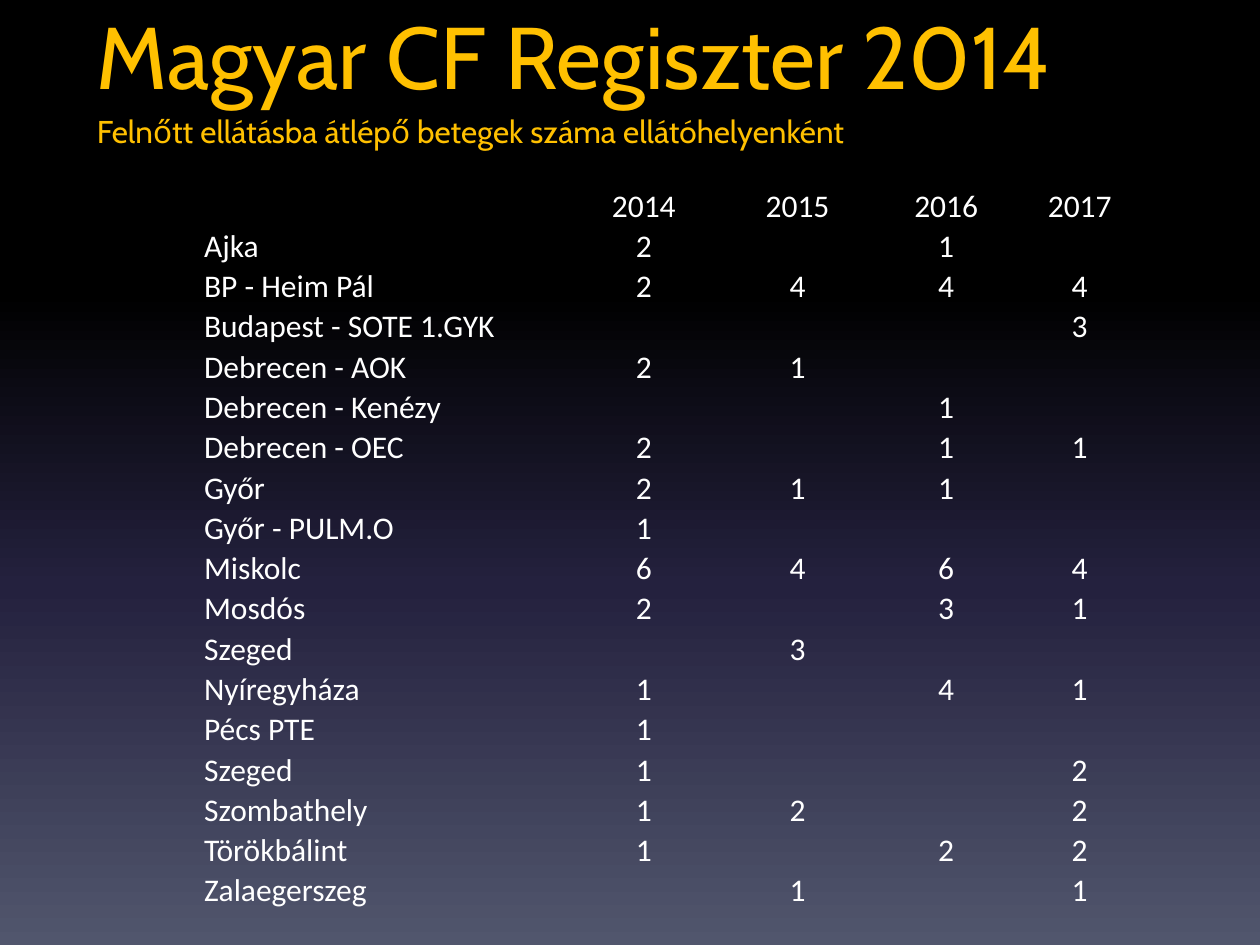
from lxml import etree
from pptx import Presentation
from pptx import util as u
from pptx.dml.color import RGBColor
from pptx.enum import text
from pptx.oxml import ns

GOLD = RGBColor(0xFF, 0xC0, 0x00)
WHITE = RGBColor(0xFF, 0xFF, 0xFF)
BLACK = RGBColor(0x00, 0x00, 0x00)
NAVY = RGBColor(0x24, 0x21, 0x3E)
SLATE = RGBColor(0x51, 0x56, 0x6D)

BACKGROUND_STOPS = [(0, BLACK), (31, BLACK), (62, NAVY), (100, SLATE)]
NO_GRID_STYLE = "{2D5ABB26-0587-4C30-8999-92F81FD0307C}"

COLUMN_WIDTHS = [2.91, 1.18, 1.26, 1.1, 1.02]
ROW_HEIGHT = 0.32
PATIENTS = [
    ("", "2014", "2015", "2016", "2017"),
    ("Ajka", "2", "", "1", ""),
    ("BP - Heim Pál", "2", "4", "4", "4"),
    ("Budapest - SOTE 1.GYK", "", "", "", "3"),
    ("Debrecen - AOK", "2", "1", "", ""),
    ("Debrecen - Kenézy", "", "", "1", ""),
    ("Debrecen - OEC", "2", "", "1", "1"),
    ("Győr", "2", "1", "1", ""),
    ("Győr - PULM.O", "1", "", "", ""),
    ("Miskolc", "6", "4", "6", "4"),
    ("Mosdós", "2", "", "3", "1"),
    ("Szeged", "", "3", "", ""),
    ("Nyíregyháza", "1", "", "4", "1"),
    ("Pécs PTE", "1", "", "", ""),
    ("Szeged", "1", "", "", "2"),
    ("Szombathely", "1", "2", "", "2"),
    ("Törökbálint", "1", "", "2", "2"),
    ("Zalaegerszeg", "", "1", "", "1"),
]


class SlideBuilder:
    """Holds the current slide and its text style."""

    heading_font = "Cabin"
    table_font = "Calibri"
    body_size = 18

    def __init__(self, s):
        self.s = s

    def background(self, stops):
        """Fill the slide from top to bottom through (percent, colour) stops."""
        fill = self.s.background.fill
        fill.gradient()
        fill.gradient_angle = 270
        stop_list = next(self.s.element.iter(ns.qn("a:gsLst")))
        for old_stop in list(stop_list):
            stop_list.remove(old_stop)
        for percent, color in stops:
            stop = etree.SubElement(stop_list, ns.qn("a:gs"), pos=str(percent * 1000))
            etree.SubElement(stop, ns.qn("a:srgbClr"), val=str(color))

    def run(self, p, words, font, size, color):
        r = p.add_run()
        r.text = words
        r.font.name = font
        r.font.size = u.Pt(size)
        r.font.color.rgb = color

    def heading(self, words, left, top, width, height, size, wrap=True):
        sp = self.s.shapes.add_textbox(*map(u.Inches, (left, top, width, height)))
        tf = sp.text_frame
        tf.word_wrap = wrap
        if not wrap:
            tf.auto_size = text.MSO_AUTO_SIZE.SHAPE_TO_FIT_TEXT
        self.run(tf.paragraphs[0], words, self.heading_font, size, GOLD)

    def table(self, rows, left, top, widths, row_height):
        frame = self.s.shapes.add_table(
            len(rows), len(widths), u.Inches(left), u.Inches(top),
            u.Inches(sum(widths)), u.Inches(row_height * len(rows)))
        table = frame.table
        table.first_row = table.horz_banding = False
        next(frame.element.iter(ns.qn("a:tableStyleId"))).text = NO_GRID_STYLE
        for column, width in zip(table.columns, widths):
            column.width = u.Inches(width)
        for i, row in enumerate(rows):
            table.rows[i].height = u.Inches(row_height)
            for j, words in enumerate(row):
                self.cell(table.cell(i, j), words, centered=j > 0)

    def cell(self, cell, words, centered):
        cell.fill.background()
        cell.vertical_anchor = text.MSO_ANCHOR.BOTTOM
        cell.margin_left = cell.margin_right = cell.margin_top = u.Inches(0.01)
        cell.margin_bottom = 0
        p = cell.text_frame.paragraphs[0]
        if centered:
            p.alignment = text.PP_ALIGN.CENTER
        if words:
            self.run(p, words, self.table_font, self.body_size, WHITE)


def main():
    prs = Presentation()
    prs.slide_width, prs.slide_height = u.Inches(10), u.Inches(7.5)
    slide = SlideBuilder(prs.slides.add_slide(prs.slide_layouts[6]))
    slide.background(BACKGROUND_STOPS)
    slide.heading("Felnőtt ellátásba átlépő betegek száma ellátóhelyenként",
                  0.67, 0.84, 6.56, 0.4, slide.body_size, wrap=False)
    slide.heading("Magyar CF Regiszter 2014", 0.67, -0.03, 9, 1.25, 50)
    slide.table(PATIENTS, 1.61, 1.47, COLUMN_WIDTHS, ROW_HEIGHT)
    prs.save("out.pptx")


if __name__ == "__main__":
    main()
